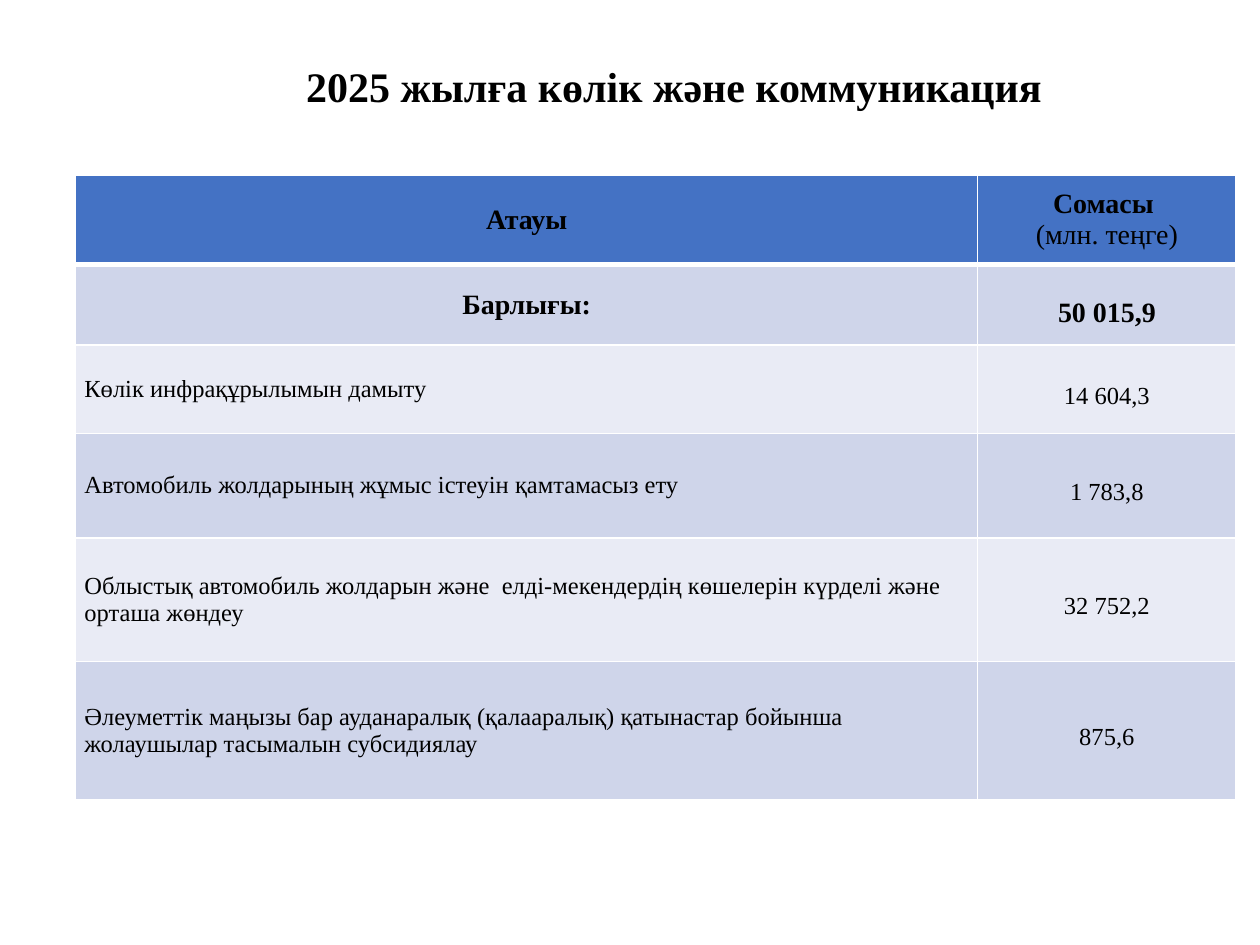
from pptx import Presentation
from pptx.dml.color import RGBColor
from pptx.enum.text import MSO_ANCHOR as Anchor, MSO_AUTO_SIZE as AutoSize, PP_ALIGN as Align
from pptx.oxml.ns import qn
from pptx.util import Inches, Pt
from lxml.etree import SubElement

COLORS = {
    "text": "000000",
    "border": "FFFFFF",
    "header": "4472C4",
    "band_dark": "CFD5EA",
    "band_light": "E9EBF5",
}
COLUMN_WIDTHS = [7.16, 2.05]
ROW_HEIGHTS = [0.71, 0.64, 0.7, 0.83, 0.98, 1.1]
EXPENSES = [
    ("Көлік инфрақұрылымын дамыту", "14 604,3"),
    ("Автомобиль жолдарының жұмыс істеуін қамтамасыз ету", "1 783,8"),
    ("Облыстық автомобиль жолдарын және  елді-мекендердің көшелерін "
     "күрделі және орташа жөндеу", "32 752,2"),
    ("Әлеуметтiк маңызы бар ауданаралық (қалааралық) қатынастар бойынша "
     "жолаушылар тасымалын субсидиялау", "875,6"),
]


class SlideBuilder:
    font = "Times New Roman"

    def __init__(self, page):
        self.page = page

    def color(self, name):
        return RGBColor.from_string(COLORS[name])

    def add_text(self, para, text, size, bold=False, align=Align.LEFT, spacing=None):
        para.alignment = align
        if spacing:
            para.line_spacing = spacing
        span = para.add_run()
        span.text = text
        span.font.name = self.font
        span.font.size = Pt(size)
        span.font.bold = bold
        span.font.color.rgb = self.color("text")

    def title(self, text, left, top, width, height):
        box = self.page.shapes.title
        box.left, box.top = Inches(left), Inches(top)
        box.width, box.height = Inches(width), Inches(height)
        frame = box.text_frame
        frame.word_wrap = True
        frame.auto_size = AutoSize.NONE
        frame.vertical_anchor = Anchor.MIDDLE
        para = frame.paragraphs[0]
        self.add_text(para, text, 24, True, Align.CENTER, 0.9)
        para._p.get_or_add_pPr().set("indent", str(Inches(0.37)))

    def table(self, left, top, widths, heights):
        frame = self.page.shapes.add_table(
            len(heights), len(widths), Inches(left), Inches(top),
            Inches(sum(widths)), Inches(sum(heights)))
        for column, width in zip(frame.table.columns, widths):
            column.width = Inches(width)
        for row, height in zip(frame.table.rows, heights):
            row.height = Inches(height)
        return frame.table

    def borders(self, cell, bottom):
        properties = cell._tc.get_or_add_tcPr()
        for side, width in (("L", 1), ("R", 1), ("T", 1), ("B", bottom)):
            line = SubElement(properties, qn(f"a:ln{side}"), w=str(Pt(width)))
            fill = SubElement(line, qn("a:solidFill"))
            SubElement(fill, qn("a:srgbClr"), val=COLORS["border"])

    def cell(self, cell, lines, fill, size, align=Align.CENTER, spacing=None,
             inset=(0.07, 0.04), bottom=1):
        """Fill a cell with lines, each a (text, bold) pair."""
        cell.margin_left = cell.margin_right = Inches(inset[0])
        cell.margin_top = cell.margin_bottom = Inches(inset[1])
        cell.vertical_anchor = Anchor.MIDDLE
        self.borders(cell, bottom)
        cell.fill.solid()
        cell.fill.fore_color.rgb = self.color(fill)
        frame = cell.text_frame
        for index, (text, bold) in enumerate(lines):
            para = frame.add_paragraph() if index else frame.paragraphs[0]
            self.add_text(para, text, size, bold, align, spacing)


def main():
    deck = Presentation()
    deck.slide_width, deck.slide_height = Inches(10), Inches(7.5)
    builder = SlideBuilder(deck.slides.add_slide(deck.slide_layouts[5]))
    builder.title("2025 жылға көлік және коммуникация ", 1, 0.36, 8.41, 0.69)

    table = builder.table(0.6, 1.39, COLUMN_WIDTHS, ROW_HEIGHTS)
    builder.cell(table.cell(0, 0), [("Атауы", True)], "header", 16,
                 inset=(0, 0), bottom=3)
    builder.cell(table.cell(0, 1), [("Сомасы ", True), ("(млн. теңге)", False)],
                 "header", 16, bottom=3)
    builder.cell(table.cell(1, 0), [("Барлығы:", True)], "band_dark", 16, inset=(0, 0))
    builder.cell(table.cell(1, 1), [("50 015,9", True)], "band_dark", 16, spacing=1.5)
    for row, (name, amount) in enumerate(EXPENSES, start=2):
        band = "band_dark" if row % 2 else "band_light"
        builder.cell(table.cell(row, 0), [(name, False)], band, 14, Align.LEFT)
        builder.cell(table.cell(row, 1), [(amount, False)], band, 14, spacing=1.5)

    deck.save("out.pptx")


if __name__ == "__main__":
    main()
